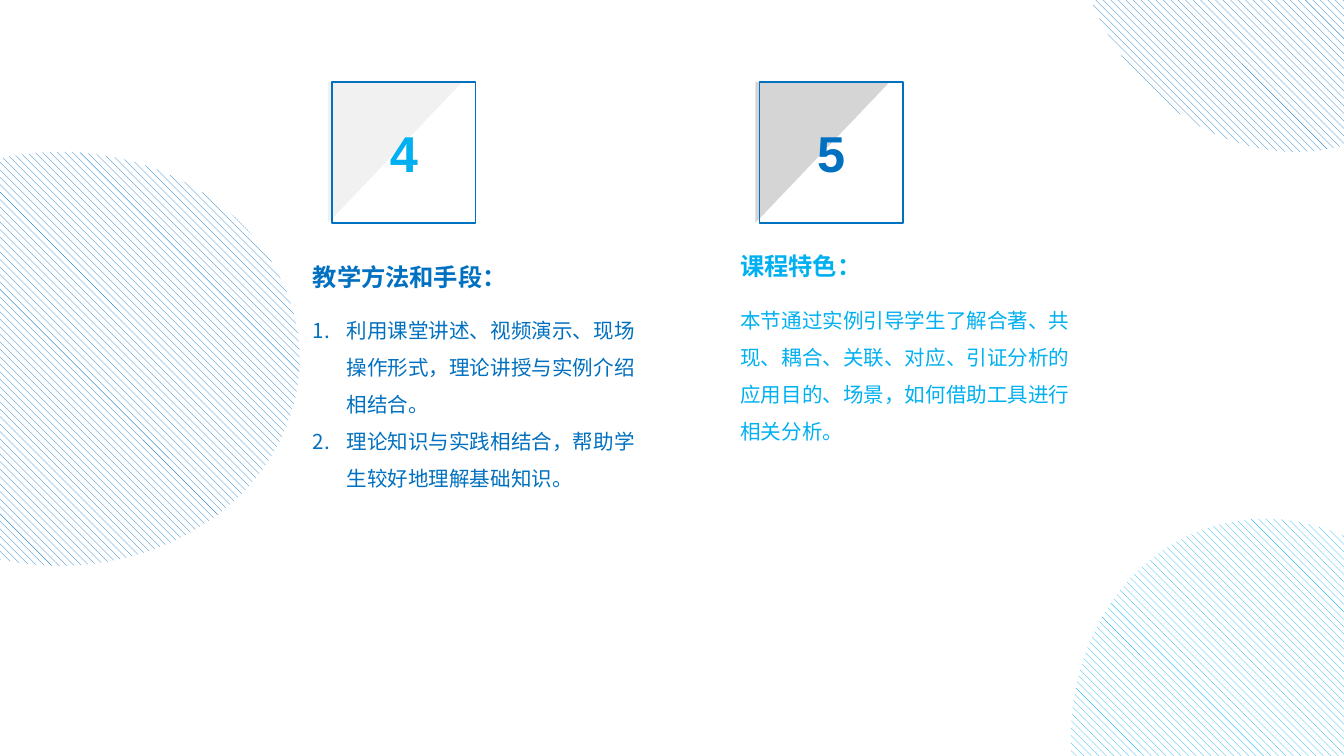
"""Build the course slide with teaching methods and course features."""
from dataclasses import dataclass

from lxml import etree
from pptx import Presentation
from pptx.dml.color import RGBColor
from pptx.enum.dml import MSO_PATTERN
from pptx.enum.shapes import MSO_SHAPE
from pptx.enum.text import MSO_ANCHOR, PP_ALIGN
from pptx.oxml.ns import qn
from pptx.util import Inches, Pt

HATCH = MSO_PATTERN.WIDE_DOWNWARD_DIAGONAL
ELLIPSE, TRIANGLE, RECT = MSO_SHAPE.OVAL, MSO_SHAPE.RIGHT_TRIANGLE, MSO_SHAPE.RECTANGLE
MIDDLE, CENTER, LEFT = MSO_ANCHOR.MIDDLE, PP_ALIGN.CENTER, PP_ALIGN.LEFT


@dataclass(frozen=True)
class Theme:
    blue: str = "0070C0"
    sky: str = "00B0F0"
    white: str = "FFFFFF"
    latin: str = "Arial"
    cjk: str = "Noto Sans CJK SC"
    number: float = 27
    heading: float = 13
    body: float = 11
    outline: float = 0.75


@dataclass(frozen=True)
class Section:
    number: str
    number_color: str
    corner_color: str
    heading: str
    colon_spacing: float
    heading_leading: float
    items: tuple[str, ...]
    numbered: bool
    color: str
    text_top: float


@dataclass(frozen=True)
class Disc:
    left: float
    top: float
    rotation: float
    color: str


THEME = Theme()
SLIDE_W = 10
SLIDE_H = SLIDE_W * 9 / 16
COL_LEFT, COL_STEP = 2.47, 3.18
BADGE_TOP, BADGE_W, BADGE_H = 0.61, 1.07, 1.05
CORNER_SHIFT, CORNER_W = -0.03, 1
TEXT_SHIFT, TEXT_W, TEXT_H = -0.24, 2.65, 3.05
DISC_W, DISC_H = 3.57, 3.08
LIST_INDENT = Inches(0.25)

DISCS = (
    Disc(-1.34, 1.13, 0, THEME.blue),
    Disc(7.74, -2.18, 75, THEME.blue),
    Disc(7.74, 4.09, 75, THEME.sky),
)
SECTIONS = (
    Section("4", THEME.sky, "F1F1F1", "教学方法和手段", 1.4, 1.0,
            ("利用课堂讲述、视频演示、现场操作形式，理论讲授与实例介绍相结合。",
             "理论知识与实践相结合，帮助学生较好地理解基础知识。"),
            True, THEME.blue, 1.9),
    Section("5", THEME.blue, "D5D5D5", "课程特色", 0.5, 1.2,
            ("本节通过实例引导学生了解合著、共现、耦合、关联、对应、引证分析的"
             "应用目的、场景，如何借助工具进行相关分析。",),
            False, THEME.sky, 1.78),
)


def rgb(color: str) -> RGBColor:
    return RGBColor.from_string(color)


def add_shape(slide, kind, left: float, top: float, width: float, height: float):
    sp = slide.shapes.add_shape(kind, *map(Inches, (left, top, width, height)))
    sp.shadow.inherit = False
    sp.line.fill.background()
    return sp


def add_run(p, text: str, size: float, color: str, font: str,
            bold: bool = False, spacing: float = 0) -> None:
    r = p.add_run()
    r.text = text
    r.font.size, r.font.bold, r.font.name = Pt(size), bold, font
    r.font.color.rgb = rgb(color)
    props = r.font._element
    etree.SubElement(props, qn("a:ea")).set("typeface", THEME.cjk)
    if spacing:
        props.set("spc", str(round(spacing * 100)))


def number_paragraph(p) -> None:
    props = p._p.get_or_add_pPr()
    props.set("marL", str(LIST_INDENT))
    props.set("indent", str(-LIST_INDENT))
    etree.SubElement(props, qn("a:buFont")).set("typeface", THEME.cjk)
    etree.SubElement(props, qn("a:buAutoNum")).set("type", "arabicPeriod")


def draw_disc(slide, disc: Disc) -> None:
    sp = add_shape(slide, ELLIPSE, disc.left, disc.top, DISC_W, DISC_H)
    sp.rotation = disc.rotation
    sp.fill.patterned()
    sp.fill.pattern = HATCH
    sp.fill.fore_color.rgb = rgb(disc.color)
    sp.fill.back_color.rgb = rgb(THEME.white)


def draw_badge(slide, section: Section, left: float) -> None:
    corner = add_shape(slide, TRIANGLE, left + CORNER_SHIFT, BADGE_TOP, CORNER_W, BADGE_H)
    corner.fill.solid()
    corner.fill.fore_color.rgb = rgb(section.corner_color)
    corner._element.spPr.find(qn("a:xfrm")).set("flipV", "1")

    frame = add_shape(slide, RECT, left, BADGE_TOP, BADGE_W, BADGE_H)
    frame.fill.background()
    frame.line.color.rgb = rgb(THEME.blue)
    frame.line.width = Pt(THEME.outline)
    tf = frame.text_frame
    tf.vertical_anchor = MIDDLE
    p = tf.paragraphs[0]
    p.alignment = CENTER
    add_run(p, section.number, THEME.number, section.number_color, THEME.latin, True)


def draw_text(slide, section: Section, left: float) -> None:
    box = (left + TEXT_SHIFT, section.text_top, TEXT_W, TEXT_H)
    tf = slide.shapes.add_textbox(*map(Inches, box)).text_frame
    tf.word_wrap = True
    p = tf.paragraphs[0]
    p.alignment = LEFT
    p.line_spacing = section.heading_leading
    p.space_after = Pt(8)
    add_run(p, section.heading, THEME.heading, section.color, THEME.cjk, True)
    add_run(p, "：", THEME.heading, section.color, THEME.latin, True, section.colon_spacing)
    for item in section.items:
        p = tf.add_paragraph()
        p.alignment = LEFT
        p.line_spacing = 1.5
        if section.numbered:
            number_paragraph(p)
        add_run(p, item, THEME.body, section.color, THEME.cjk)


def main() -> None:
    prs = Presentation()
    prs.slide_width, prs.slide_height = Inches(SLIDE_W), Inches(SLIDE_H)
    slide = prs.slides.add_slide(prs.slide_layouts.get_by_name("Blank"))
    for disc in DISCS:
        draw_disc(slide, disc)
    for col, section in enumerate(SECTIONS):
        left = COL_LEFT + col * COL_STEP
        draw_text(slide, section, left)
        draw_badge(slide, section, left)
    prs.save("out.pptx")


if __name__ == "__main__":
    main()
